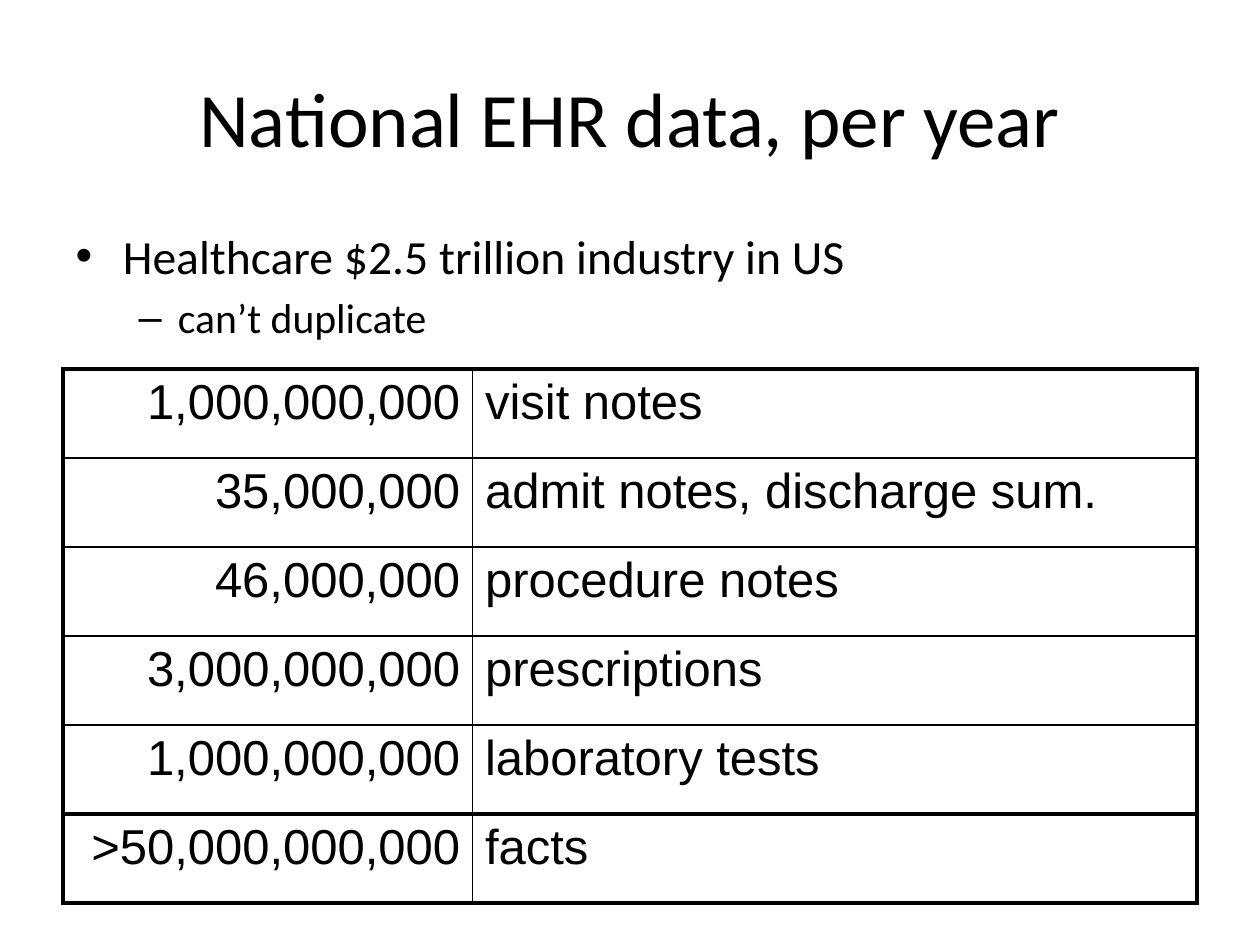
from lxml.etree import SubElement
from pptx import Presentation
from pptx.dml.color import RGBColor
from pptx.enum.text import MSO_ANCHOR, MSO_AUTO_SIZE, PP_ALIGN
from pptx.oxml.ns import qn
from pptx.util import Inches, Pt

TITLE = "National EHR data, per year"
BULLETS = [
    ("Healthcare $2.5 trillion industry in US", 0, 27.2),
    ("can’t duplicate", 1, 23.8),
]
RECORDS = [
    ("1,000,000,000", "visit notes"),
    ("35,000,000", "admit notes, discharge sum."),
    ("46,000,000", "procedure notes"),
    ("3,000,000,000", "prescriptions"),
    ("1,000,000,000", "laboratory tests"),
    (">50,000,000,000", "facts"),
]
COLUMN_WIDTHS = [3.25, 5.75]
COLUMN_ALIGNMENTS = [PP_ALIGN.RIGHT, PP_ALIGN.LEFT]
TABLE_HEIGHT = 4.24
THICK, THIN = 2.25, 1
BLACK = RGBColor(0, 0, 0)


def place(shape, left, top, width, height):
    shape.left, shape.top = Inches(left), Inches(top)
    shape.width, shape.height = Inches(width), Inches(height)


def format_text(paragraph, font_name, size):
    for run in paragraph.runs:
        run.font.name = font_name
        run.font.size = Pt(size)
        run.font.color.rgb = BLACK


def add_borders(cell, widths):
    properties = cell._tc.get_or_add_tcPr()
    for side, width in widths.items():
        line = SubElement(properties, qn(f"a:ln{side}"), w=str(Pt(width)))
        fill = SubElement(line, qn("a:solidFill"))
        SubElement(fill, qn("a:srgbClr"), val=str(BLACK))


def add_title(slide):
    title = slide.shapes.title
    place(title, 0.5, 0.3, 9, 1.25)
    title.text_frame.text = TITLE
    title.text_frame.vertical_anchor = MSO_ANCHOR.MIDDLE
    title.text_frame.paragraphs[0].alignment = PP_ALIGN.CENTER
    format_text(title.text_frame.paragraphs[0], "Calibri", 44)


def add_bullets(slide):
    body = slide.placeholders[1]
    place(body, 0.5, 1.75, 9, 0.92)
    frame = body.text_frame
    frame.text = "\n".join(text for text, _, _ in BULLETS)
    frame.auto_size = MSO_AUTO_SIZE.NONE
    for paragraph, (_, level, size) in zip(frame.paragraphs, BULLETS):
        paragraph.level = level
        format_text(paragraph, "Calibri", size)


def add_records(slide):
    table = slide.shapes.add_table(
        len(RECORDS), len(COLUMN_WIDTHS), Inches(0.5), Inches(2.93),
        Inches(sum(COLUMN_WIDTHS)), Inches(TABLE_HEIGHT)).table
    table.first_row = table.horz_banding = False
    for column, width in zip(table.columns, COLUMN_WIDTHS):
        column.width = Inches(width)

    last_row = len(RECORDS) - 1
    for row, record in enumerate(RECORDS):
        for column, text in enumerate(record):
            cell = table.cell(row, column)
            add_borders(cell, {
                "L": THICK if column == 0 else THIN,
                "R": THICK if column == len(record) - 1 else THIN,
                "T": THICK if row in (0, last_row) else THIN,
                "B": THICK if row >= last_row - 1 else THIN,
            })
            cell.fill.background()
            cell.text_frame.text = text
            paragraph = cell.text_frame.paragraphs[0]
            paragraph.alignment = COLUMN_ALIGNMENTS[column]
            format_text(paragraph, "Arial", 28)


def main():
    presentation = Presentation()
    presentation.slide_width, presentation.slide_height = Inches(10), Inches(7.5)
    slide = presentation.slides.add_slide(presentation.slide_layouts[1])
    add_title(slide)
    add_bullets(slide)
    add_records(slide)
    presentation.save("out.pptx")


if __name__ == "__main__":
    main()
